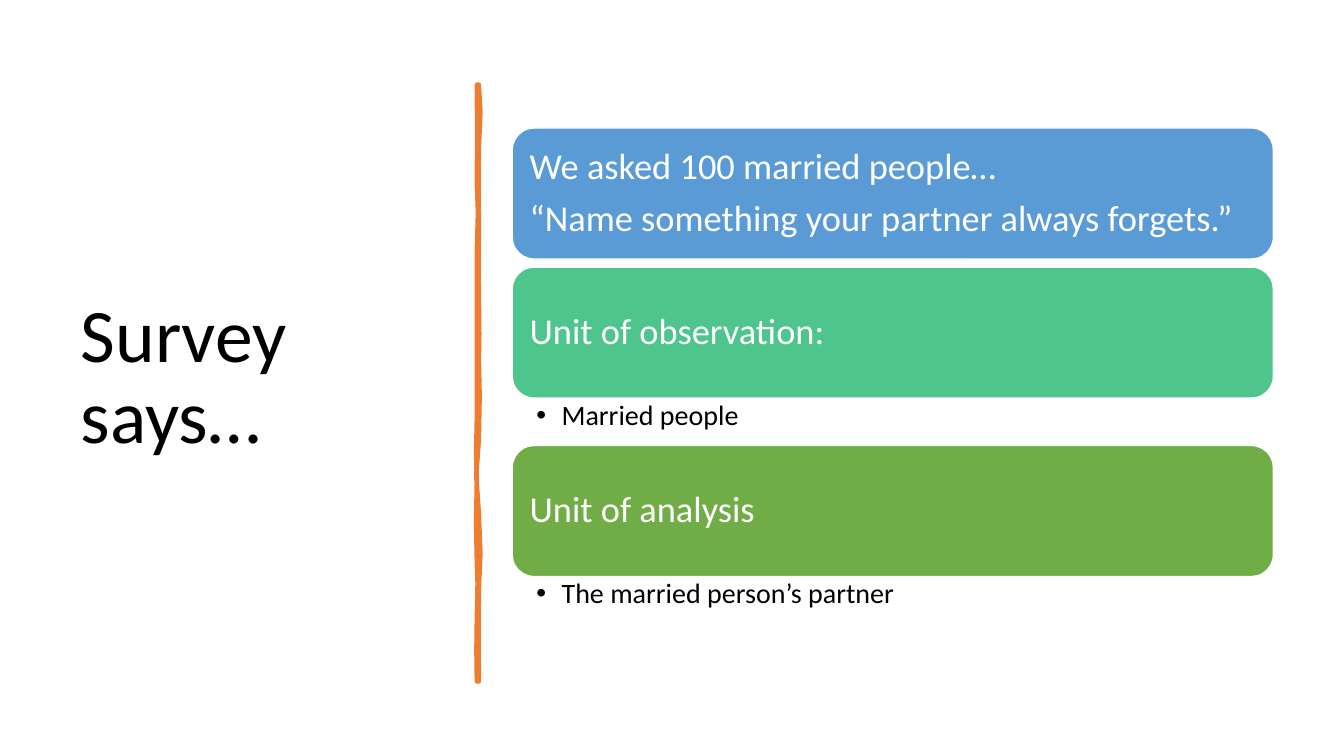
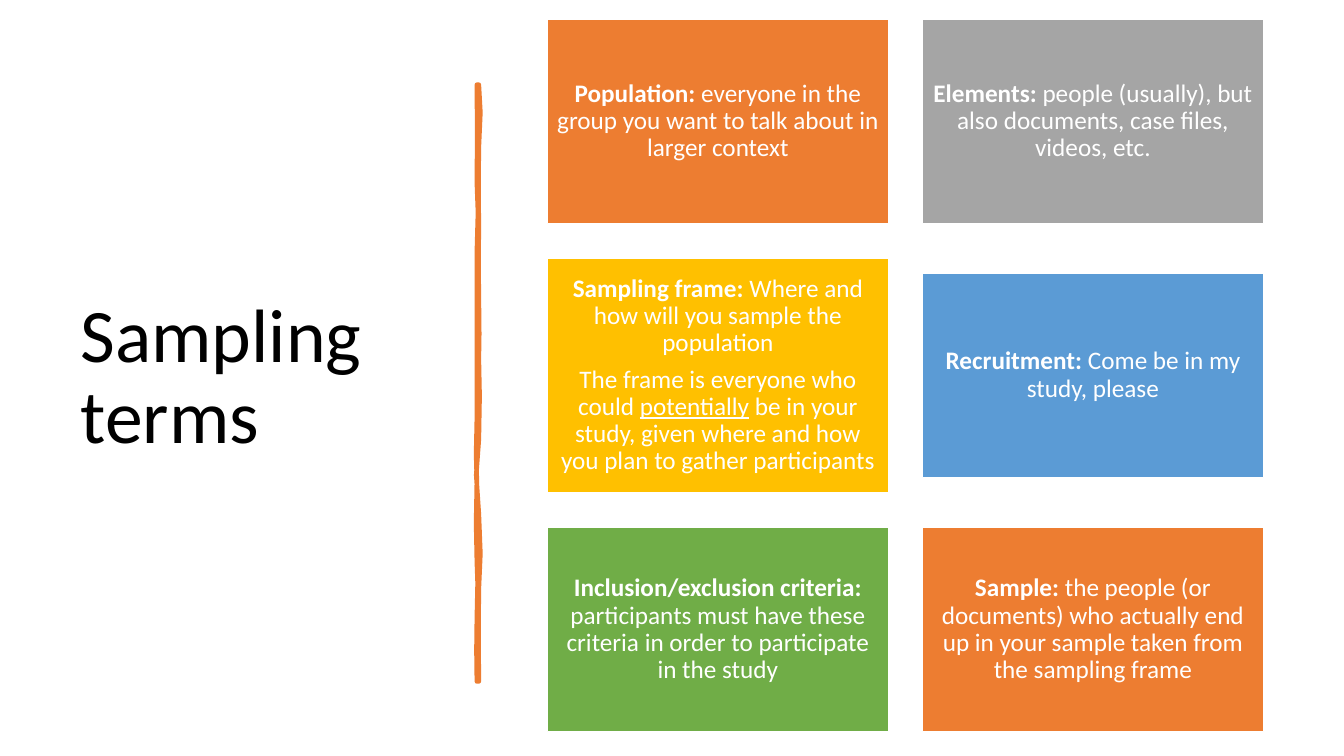
import lxml.etree
import pptx
import pptx.dml.color
import pptx.enum.shapes
import pptx.enum.text
import pptx.oxml.ns
import pptx.util

Inches = pptx.util.Inches
Pt = pptx.util.Pt
RGB = pptx.dml.color.RGBColor.from_string
Align = pptx.enum.text.PP_ALIGN
Anchor = pptx.enum.text.MSO_ANCHOR
Shape = pptx.enum.shapes.MSO_SHAPE


class Theme:
    font = "Calibri"
    black = RGB("000000")
    white = RGB("FFFFFF")
    orange = RGB("ED7D31")
    gray = RGB("A5A5A5")
    gold = RGB("FFC000")
    blue = RGB("5B9BD5")
    teal = RGB("4DC58D")
    green = RGB("70AD47")
    title_size = 54
    heading_size = 26
    detail_size = 20
    card_size = 18
    line_spacing = 0.9


def write(frame, paragraphs, size, color, align=Align.LEFT, inset=0.1, after=0.35):
    """Fill a frame with paragraphs, each a list of (text, style) runs.

    The style is "b" for bold, "u" for underlined or empty;
    after is the gap below a paragraph as a share of the type size.
    """
    frame.word_wrap = True
    frame.margin_left = frame.margin_right = Inches(inset)
    frame.margin_top = frame.margin_bottom = Inches(inset)
    for number, runs in enumerate(paragraphs):
        paragraph = frame.add_paragraph() if number else frame.paragraphs[0]
        paragraph.alignment = align
        paragraph.line_spacing = Theme.line_spacing
        paragraph.space_after = Pt(size * after)
        for text, style in runs:
            run = paragraph.add_run()
            run.text = text
            run.font.name = Theme.font
            run.font.size = Pt(size)
            run.font.color.rgb = color
            run.font.bold = style == "b"
            run.font.underline = style == "u"


def add_panel(slide, outline, left, top, width, height, color):
    panel = slide.shapes.add_shape(
        outline, Inches(left), Inches(top), Inches(width), Inches(height))
    panel.shadow.inherit = False
    panel.fill.solid()
    panel.fill.fore_color.rgb = color
    panel.line.color.rgb = Theme.white
    panel.line.width = Pt(1)
    panel.text_frame.vertical_anchor = Anchor.MIDDLE
    return panel


deck = pptx.Presentation()
deck.slide_width = Inches(13.33)
deck.slide_height = Inches(7.5)

# The hand-drawn divider: a start point, then curves of two controls and an end
brush_start = (4.75, 0.84)
brush_curves = [
    (4.77, 1.02, 4.77, 1.19, 4.75, 1.46),
    (4.73, 1.73, 4.76, 1.95, 4.75, 2.26),
    (4.74, 2.57, 4.75, 2.62, 4.75, 2.94),
    (4.74, 3.25, 4.77, 3.42, 4.75, 3.56),
    (4.73, 3.7, 4.79, 4.14, 4.75, 4.36),
    (4.71, 4.57, 4.72, 4.84, 4.75, 5.1),
    (4.77, 5.36, 4.77, 5.64, 4.75, 5.84),
    (4.73, 6.03, 4.76, 6.5, 4.75, 6.76),
    (4.74, 6.76, 4.73, 6.76, 4.73, 6.76),
    (4.74, 6.46, 4.71, 6.44, 4.73, 6.13),
    (4.74, 5.83, 4.74, 5.7, 4.73, 5.57),
    (4.72, 5.44, 4.72, 4.95, 4.73, 4.77),
    (4.73, 4.59, 4.71, 4.45, 4.73, 4.15),
    (4.74, 3.86, 4.72, 3.73, 4.73, 3.35),
    (4.74, 2.98, 4.72, 2.81, 4.73, 2.5),
    (4.74, 2.18, 4.75, 2, 4.73, 1.81),
    (4.7, 1.63, 4.77, 1.04, 4.73, 0.84),
]
# Each curve becomes two straight strokes, by way of its midpoint
brush_points = []
x0, y0 = brush_start
for x1, y1, x2, y2, x3, y3 in brush_curves:
    brush_points.append((Inches((x0 + 3 * x1 + 3 * x2 + x3) / 8),
                         Inches((y0 + 3 * y1 + 3 * y2 + y3) / 8)))
    brush_points.append((Inches(x3), Inches(y3)))
    x0, y0 = x3, y3

# Title and divider on both slides
slides = []
for heading in ("Survey says…", "Sampling terms"):
    slide = deck.slides.add_slide(deck.slide_layouts[5])
    title = slide.shapes.title
    title.left, title.top = Inches(0.7), Inches(0.7)
    title.width, title.height = Inches(3.74), Inches(6.11)
    title.text_frame.vertical_anchor = Anchor.MIDDLE
    write(title.text_frame, [[(heading, "")]], Theme.title_size, Theme.black, after=0)

    builder = slide.shapes.build_freeform(Inches(brush_start[0]), Inches(brush_start[1]))
    builder.add_line_segments(brush_points, close=True)
    divider = builder.convert_to_shape()
    divider.shadow.inherit = False
    divider.fill.solid()
    divider.fill.fore_color.rgb = Theme.orange
    divider.line.color.rgb = Theme.orange
    divider.line.width = Pt(3.25)
    slides.append(slide)
survey_slide, terms_slide = slides

# Survey: stacked headings, some with a bulleted answer below
survey_steps = [
    (["We asked 100 married people…",
      "“Name something your partner always forgets.”"], "", Theme.blue),
    (["Unit of observation:"], "Married people", Theme.teal),
    (["Unit of analysis"], "The married person’s partner", Theme.green),
]
step_left, step_width, step_height = 5.08, 7.55, 1.3
answer_height, step_gap = 0.47, 0.08
top = 1.27
for lines, answer, color in survey_steps:
    panel = add_panel(survey_slide, Shape.ROUNDED_RECTANGLE,
                      step_left, top, step_width, step_height, color)
    write(panel.text_frame, [[(line, "")] for line in lines],
          Theme.heading_size, Theme.white, inset=0.11)
    top += step_height
    if not answer:
        top += step_gap
        continue
    answer_box = survey_slide.shapes.add_textbox(
        Inches(step_left), Inches(top), Inches(step_width), Inches(answer_height))
    write(answer_box.text_frame, [[(answer, "")]],
          Theme.detail_size, Theme.black, inset=0.03, after=0.2)
    answer_box.text_frame.margin_left = Inches(0.24)
    answer_box.text_frame.margin_right = Inches(0.2)
    properties = answer_box.text_frame.paragraphs[0]._p.get_or_add_pPr()
    properties.set("marL", str(Inches(0.25)))
    properties.set("indent", str(Inches(-0.25)))
    bullet_font = lxml.etree.SubElement(properties, pptx.oxml.ns.qn("a:buFont"))
    bullet_font.set("typeface", "Arial")
    bullet = lxml.etree.SubElement(properties, pptx.oxml.ns.qn("a:buChar"))
    bullet.set("char", "•")
    top += answer_height

# Terms: two columns of cards, each centred in the height of its row
card_width, card_height, tall_height = 3.38, 2.03, 2.33
card_left, column_gap, row_gap = 5.43, 0.34, 0.34
term_rows = [
    [
        (Theme.orange, card_height, [[
            ("Population: ", "b"),
            ("everyone in the group you want to talk about in larger context", "")]]),
        (Theme.gray, card_height, [[
            ("Elements:", "b"),
            (" people (usually), but also documents, case files, videos, etc.", "")]]),
    ],
    [
        (Theme.gold, tall_height, [
            [("Sampling frame: ", "b"),
             ("Where and how will you sample the population", "")],
            [("The frame is everyone who could ", ""),
             ("potentially", "u"),
             (" be in your study, given where and how you plan to gather participants", "")]]),
        (Theme.blue, card_height, [[
            ("Recruitment:", "b"),
            (" Come be in my study, please", "")]]),
    ],
    [
        (Theme.green, card_height, [[
            ("Inclusion/exclusion criteria: ", "b"),
            ("participants must have these criteria in order to participate in the study", "")]]),
        (Theme.orange, card_height, [[
            ("Sample:", "b"),
            (" the people (or documents) who actually end up in your sample "
             "taken from the sampling frame", "")]]),
    ],
]
top = 0.19
for row in term_rows:
    row_height = max(height for color, height, definition in row)
    for column, (color, height, definition) in enumerate(row):
        card = add_panel(terms_slide, Shape.RECTANGLE,
                         card_left + column * (card_width + column_gap),
                         top + (row_height - height) / 2, card_width, height, color)
        write(card.text_frame, definition, Theme.card_size, Theme.white,
              align=Align.CENTER, inset=0.07)
    top += row_height + row_gap

deck.save("out.pptx")
